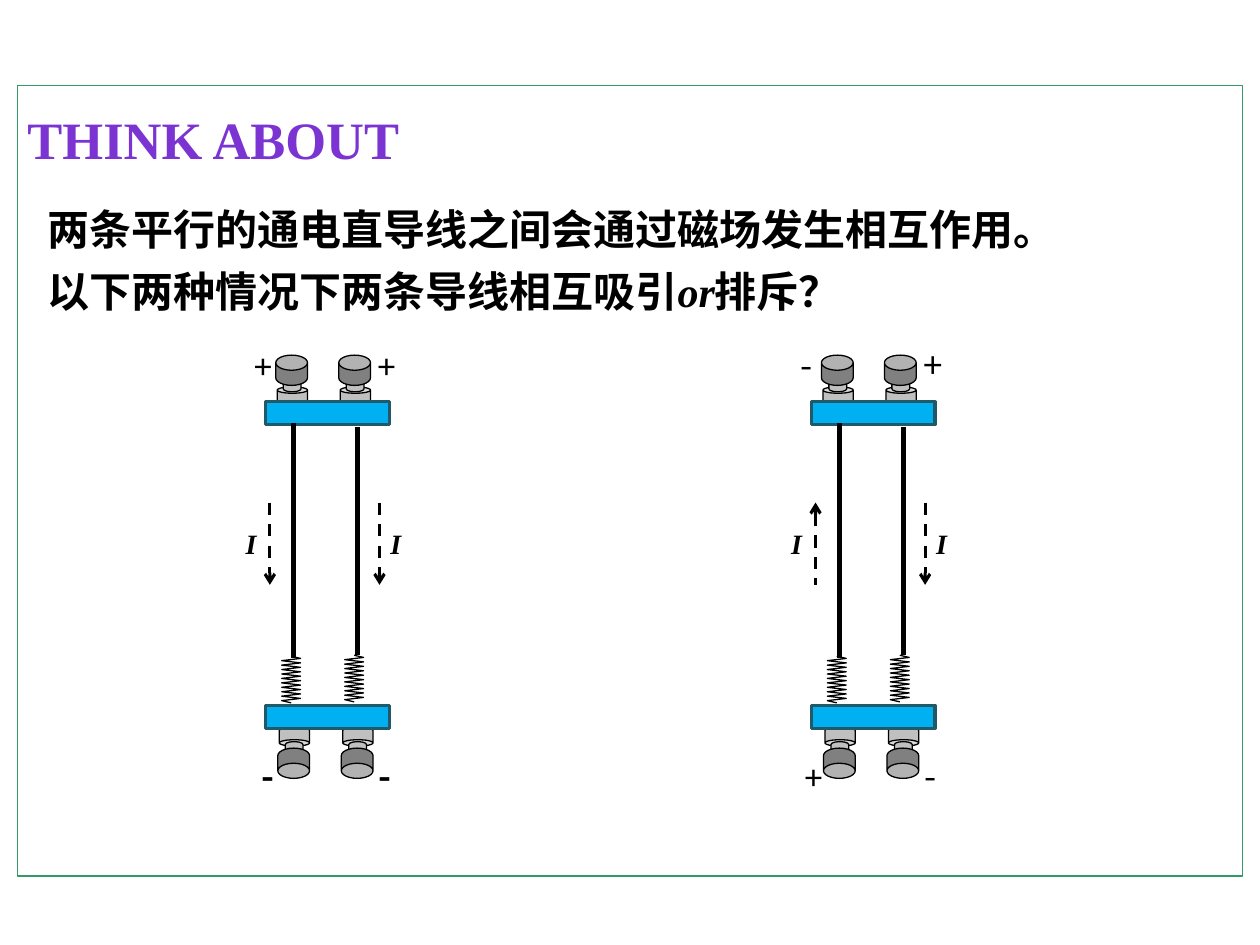
from pptx import Presentation
from pptx.dml.color import RGBColor as RGB
from pptx.enum.dml import MSO_LINE
from pptx.enum.shapes import MSO_CONNECTOR as LINK, MSO_SHAPE as KIND
from pptx.enum.text import MSO_ANCHOR as ANCHOR, PP_ALIGN as ALIGN
from pptx.oxml.ns import qn
from pptx.util import Cm, Pt
from lxml.etree import SubElement

BLACK = RGB(0, 0, 0)
WHITE = RGB(0xFF, 0xFF, 0xFF)
PURPLE = RGB(0x7B, 0x34, 0xD2)
GREEN = RGB(0x33, 0x99, 0x66)
SILVER = RGB(0xC0, 0xC0, 0xC0)
GREY = RGB(0x80, 0x80, 0x80)
BLUE = RGB(0x00, 0xB0, 0xF0)
TEAL = RGB(0x21, 0x59, 0x68)

SERIF, SANS, CJK = "Times New Roman", "Calibri", "Noto Sans CJK SC"

TITLE = "THINK ABOUT"
LINES = [
    (3.73, 24, [("两条平行的通电直导线之间会通过磁场发生相互作用。", False)]),
    (4.98, 17.37, [("以下两种情况下两条导线相互吸引", False), ("or", True), ("排斥？", False)]),
]

RIGS = [
    {"shift": 0, "flow": ("down", "down"), "high": 1.04,
     "signs": [("+", SANS, False), ("+", SANS, False), ("-", CJK, True), ("-", CJK, True)]},
    {"shift": 11, "flow": ("up", "down"), "high": 1.12,
     "signs": [("-", CJK, False), ("+", CJK, False), ("+", SANS, False), ("-", CJK, False)]},
]

CANS = [
    (0.03, 7.8, 14.66, 0.61, 0.38, 0.339, SILVER),
    (0.15, 7.54, 14.95, 0.36, 0.36, 0.333, SILVER),
    (0, 7.16, 15.08, 0.64, 0.61, 0.5, GREY),
]
POSTS = [(6.83, False), (5.6, True), (5.56, False), (6.88, True)]
PLATES = [8.1, 14.22]
WIRES = [(5.92, 8.53, 13.26), (7.21, 8.61, 13.21)]
COILS = [(5.87, 13.23), (7.14, 13.21)]
SIGNS = [(4.88, 6.81, ALIGN.LEFT), (7.37, 6.81, ALIGN.LEFT),
         (4.93, 15.09, ALIGN.CENTER), (7.29, 15.09, ALIGN.CENTER)]
FLOWS = [(5.44, 4.7), (7.65, 7.62)]


def style(run, size, face, color=BLACK, bold=False, italic=False):
    font = run.font
    font.size, font.name = Pt(size), face
    font.bold, font.italic = bold, italic
    font.color.rgb = color


def block(shapes, kind, box, fill, edge, width):
    shape = shapes.add_shape(kind, *map(Cm, box))
    shape.shadow.inherit = False
    shape.fill.solid()
    shape.fill.fore_color.rgb = fill
    shape.line.color.rgb = edge
    shape.line.width = Pt(width)
    return shape


def label(shapes, box, text, align=ALIGN.LEFT, **look):
    frame = shapes.add_textbox(*map(Cm, box)).text_frame
    frame.word_wrap = True
    para = frame.paragraphs[0]
    para.text = text
    para.alignment = align
    style(para.runs[0], **look)


def link(shapes, x, top, end, width, flow=None):
    wire = shapes.add_connector(LINK.STRAIGHT, Cm(x), Cm(top), Cm(x), Cm(end))
    wire.line.color.rgb = BLACK
    wire.line.width = Pt(width)
    props = wire._element.spPr
    if flow:
        wire.line.dash_style = MSO_LINE.DASH
        tip = "a:tailEnd" if flow == "down" else "a:headEnd"
        SubElement(props.find(qn("a:ln")), qn(tip)).set("type", "arrow")
    SubElement(props, qn("a:effectLst"))


def coil(shapes, x, top, turns=20, reach=0.19, drop=0.94):
    step = drop / (turns + 1)
    zigzag = [(x + (-reach if i % 2 else reach), top + (i + 1) * step) for i in range(turns)]
    zigzag.append((x, top + drop))
    path = shapes.build_freeform(Cm(x), Cm(top))
    path.add_line_segments([(Cm(a), Cm(b)) for a, b in zigzag], close=False)
    shape = path.convert_to_shape()
    shape.shadow.inherit = False
    shape.fill.background()
    shape.line.color.rgb = BLACK
    shape.line.width = Pt(0.75)


def draw(slide, rig):
    shapes = slide.shapes.add_group_shape().shapes
    dx = rig["shift"]
    for x, flip in POSTS:
        for inset, high, low, wide, tall, bend, color in CANS:
            box = (x + inset + dx, low if flip else high, wide, tall)
            can = block(shapes, KIND.CAN, box, color, BLACK, 0.75)
            can.adjustments[0] = bend
            can.rotation = 180 if flip else 0
    for y in PLATES:
        block(shapes, KIND.RECTANGLE, (5.36 + dx, y, 2.49, 0.46), BLUE, TEAL, 1.75)
    for x, top, end in WIRES:
        link(shapes, x + dx, top, end, 3)
    for x, top in COILS:
        coil(shapes, x + dx, top)
    for (x, y, align), (sign, face, bold) in zip(SIGNS, rig["signs"]):
        label(shapes, (x + dx, y, 0.94, rig["high"]), sign, align, size=20, face=face, bold=bold)
    for (x, left), flow in zip(FLOWS, rig["flow"]):
        link(shapes, x + dx, 10.13, 11.79, 1.75, flow)
        label(shapes, (left + dx, 10.49, 0.58, 0.86), "I",
              size=16, face=SERIF, bold=True, italic=True)


def main():
    deck = Presentation()
    deck.slide_width, deck.slide_height = Cm(25.4), Cm(19.05)
    slide = deck.slides.add_slide(deck.slide_layouts[5])
    shapes = slide.shapes

    panel = block(shapes, KIND.RECTANGLE, (0.36, 1.73, 24.69, 15.93), WHITE, GREEN, 0.75)
    shapes._spTree.insert(2, panel._element)

    title = shapes.title
    title.left, title.top, title.width, title.height = map(Cm, (0.3, 2.03, 8.84, 1.55))
    frame = title.text_frame
    frame.text = TITLE
    frame.vertical_anchor = ANCHOR.TOP
    frame.paragraphs[0].alignment = ALIGN.LEFT
    style(frame.paragraphs[0].runs[0], 30, SERIF, PURPLE, bold=True)

    for top, wide, parts in LINES:
        frame = shapes.add_textbox(Cm(0.71), Cm(top), Cm(wide), Cm(1.55)).text_frame
        frame.word_wrap = True
        para = frame.paragraphs[0]
        para.line_spacing = 1.25
        for text, italic in parts:
            run = para.add_run()
            run.text = text
            style(run, 24, SERIF, bold=True, italic=italic)

    for rig in RIGS:
        draw(slide, rig)
    deck.save("out.pptx")


if __name__ == "__main__":
    main()
